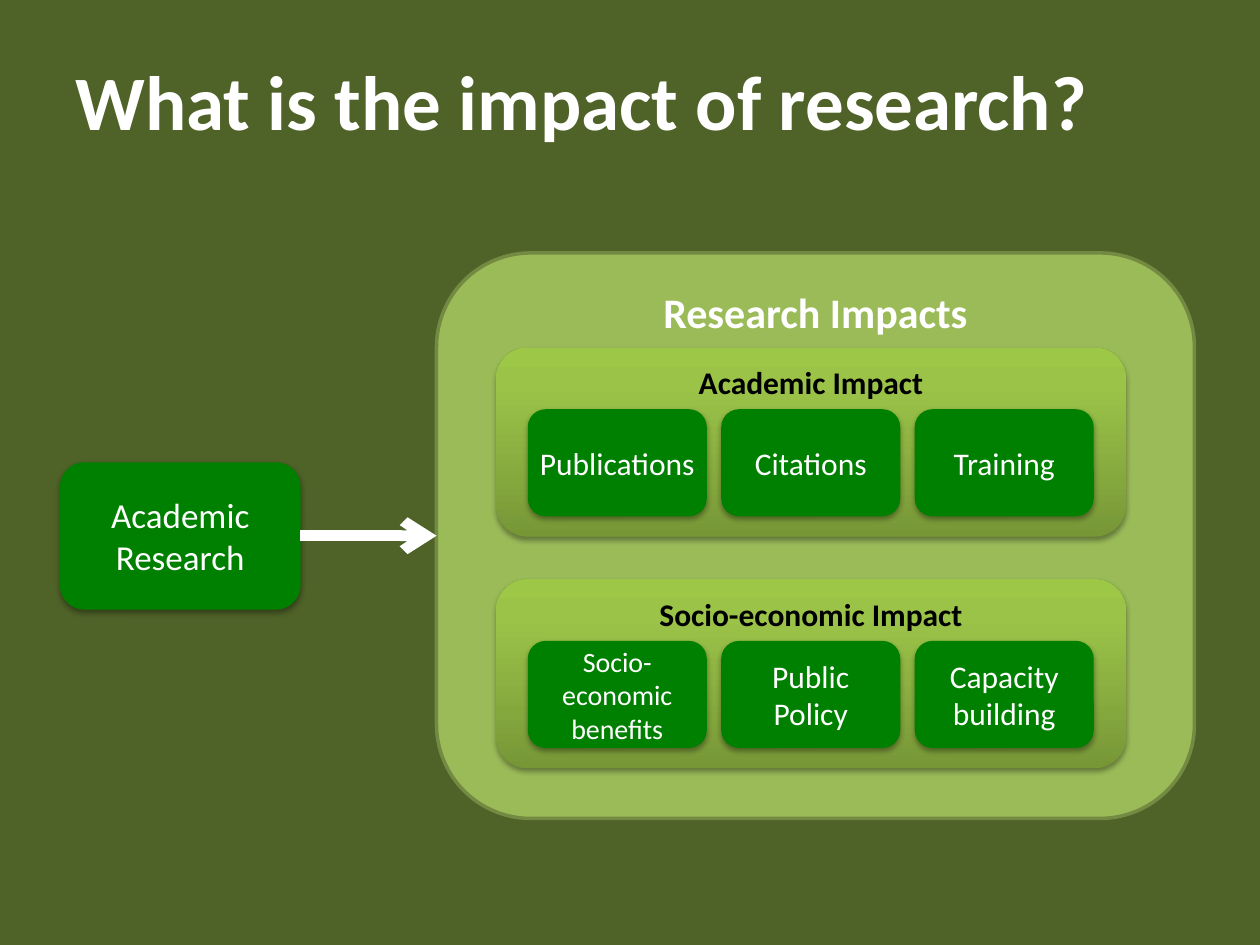
from lxml import etree
from pptx import Presentation
from pptx.dml.color import RGBColor
from pptx.enum.shapes import MSO_CONNECTOR, MSO_SHAPE
from pptx.enum.text import MSO_ANCHOR, PP_ALIGN
from pptx.oxml.ns import qn
from pptx.util import Cm, Pt

ROUNDED = MSO_SHAPE.ROUNDED_RECTANGLE
STRAIGHT = MSO_CONNECTOR.STRAIGHT
TOP, MIDDLE = MSO_ANCHOR.TOP, MSO_ANCHOR.MIDDLE
LEFT, CENTER = PP_ALIGN.LEFT, PP_ALIGN.CENTER
TITLE_ONLY = 5

COLORS = {
    "background": "4F6228",
    "white": "FFFFFF",
    "black": "000000",
    "green": "008000",
    "olive": "9BBB59",
    "outline": "738A42",
}
PANEL_STOPS = [(0, "779737"), (80, "9BC348"), (100, "9DC746")]
PANELS = [
    (7.01, "Academic Impact",
     [("Publications", 18), ("Citations", 18), ("Training", 18)]),
    (11.68, "Socio-economic Impact",
     [("Socio-economic benefits", 16), ("Public Policy", 18), ("Capacity building", 18)]),
]
PANEL_LEFT, PANEL_WIDTH, PANEL_HEIGHT = 10, 12.7, 3.81
CARD_LEFT, CARD_WIDTH, CARD_HEIGHT = 10.64, 3.61, 2.16
CARD_PITCH, CARD_DROP = 3.9, 1.24


class ImpactSlide:
    """Draws the research impact diagram in one consistent style."""

    def __init__(self, deck):
        self.font = "Calibri"
        self.page = deck.slides.add_slide(deck.slide_layouts[TITLE_ONLY])
        fill = self.page.background.fill
        fill.solid()
        fill.fore_color.rgb = self.color("background")

    def color(self, name):
        return RGBColor.from_string(COLORS[name])

    def label(self, box, text, size, color="white", bold=False, align=CENTER, anchor=MIDDLE):
        frame = box.text_frame
        frame.word_wrap = True
        frame.vertical_anchor = anchor
        para = frame.paragraphs[0]
        para.alignment = align
        span = para.add_run()
        span.text = text
        for name, value in {"name": self.font, "size": Pt(size), "bold": bold}.items():
            setattr(span.font, name, value)
        span.font.color.rgb = self.color(color)

    def title(self, text):
        box = self.page.shapes.title
        frame = {"left": Cm(1.27), "top": Cm(0.41), "width": Cm(22.86), "height": Cm(3.18)}
        for name, value in frame.items():
            setattr(box, name, value)
        self.label(box, text, 44, bold=True, align=LEFT)

    def rounded(self, left, top, width, height):
        box = self.page.shapes.add_shape(ROUNDED, Cm(left), Cm(top), Cm(width), Cm(height))
        box.shadow.inherit = False
        box.line.fill.background()
        return box

    def cast_shadow(self, box):
        effects = box._element.spPr.find(qn("a:effectLst"))
        shadow = etree.SubElement(effects, qn("a:outerShdw"), blurRad="40000", dist="23000",
                                  dir="5400000", rotWithShape="0")
        tint = etree.SubElement(shadow, qn("a:srgbClr"), val=COLORS["black"])
        etree.SubElement(tint, qn("a:alpha"), val="35000")

    def container(self, left, top, width, height, text):
        box = self.rounded(left, top, width, height)
        box.fill.solid()
        box.fill.fore_color.rgb = self.color("olive")
        box.line.color.rgb = self.color("outline")
        box.line.width = Pt(2)
        self.label(box, text, 24, bold=True, anchor=TOP)

    def panel(self, left, top, width, height, text):
        box = self.rounded(left, top, width, height)
        box.fill.gradient()
        box.fill.gradient_angle = 90
        stops = box._element.spPr.find(qn("a:gradFill")).find(qn("a:gsLst"))
        for stop in list(stops):
            stops.remove(stop)
        for percent, tone in PANEL_STOPS:
            stop = etree.SubElement(stops, qn("a:gs"), pos=str(percent * 1000))
            etree.SubElement(stop, qn("a:srgbClr"), val=tone)
        self.cast_shadow(box)
        self.label(box, text, 18, color="black", bold=True, anchor=TOP)

    def card(self, left, top, width, height, text, size, tight=False):
        box = self.rounded(left, top, width, height)
        box.fill.solid()
        box.fill.fore_color.rgb = self.color("green")
        self.cast_shadow(box)
        if tight:
            box.text_frame.margin_left = box.text_frame.margin_right = Cm(0)
        self.label(box, text, size)

    def arrow(self, start, end, level):
        line = self.page.shapes.add_connector(STRAIGHT, Cm(start), Cm(level), Cm(end), Cm(level))
        line.line.color.rgb = self.color("white")
        line.line.width = Pt(6)
        outline = line._element.spPr.find(qn("a:ln"))
        etree.SubElement(outline, qn("a:tailEnd"), type="arrow")
        etree.SubElement(line._element.spPr, qn("a:effectLst"))


def main():
    deck = Presentation()
    deck.slide_width, deck.slide_height = Cm(25.4), Cm(19.05)
    slide = ImpactSlide(deck)
    slide.title("What is the impact of research?")
    slide.card(1.21, 9.32, 4.85, 2.97, "Academic Research", 20)
    slide.container(8.8, 5.1, 15.28, 11.4, "Research Impacts")
    slide.arrow(6.05, 8.8, 10.8)
    for top, heading, cards in PANELS:
        slide.panel(PANEL_LEFT, top, PANEL_WIDTH, PANEL_HEIGHT, heading)
        for column, (text, size) in enumerate(cards):
            slide.card(CARD_LEFT + column * CARD_PITCH, top + CARD_DROP,
                       CARD_WIDTH, CARD_HEIGHT, text, size, tight=column == 0)
    deck.save("out.pptx")


if __name__ == "__main__":
    main()
